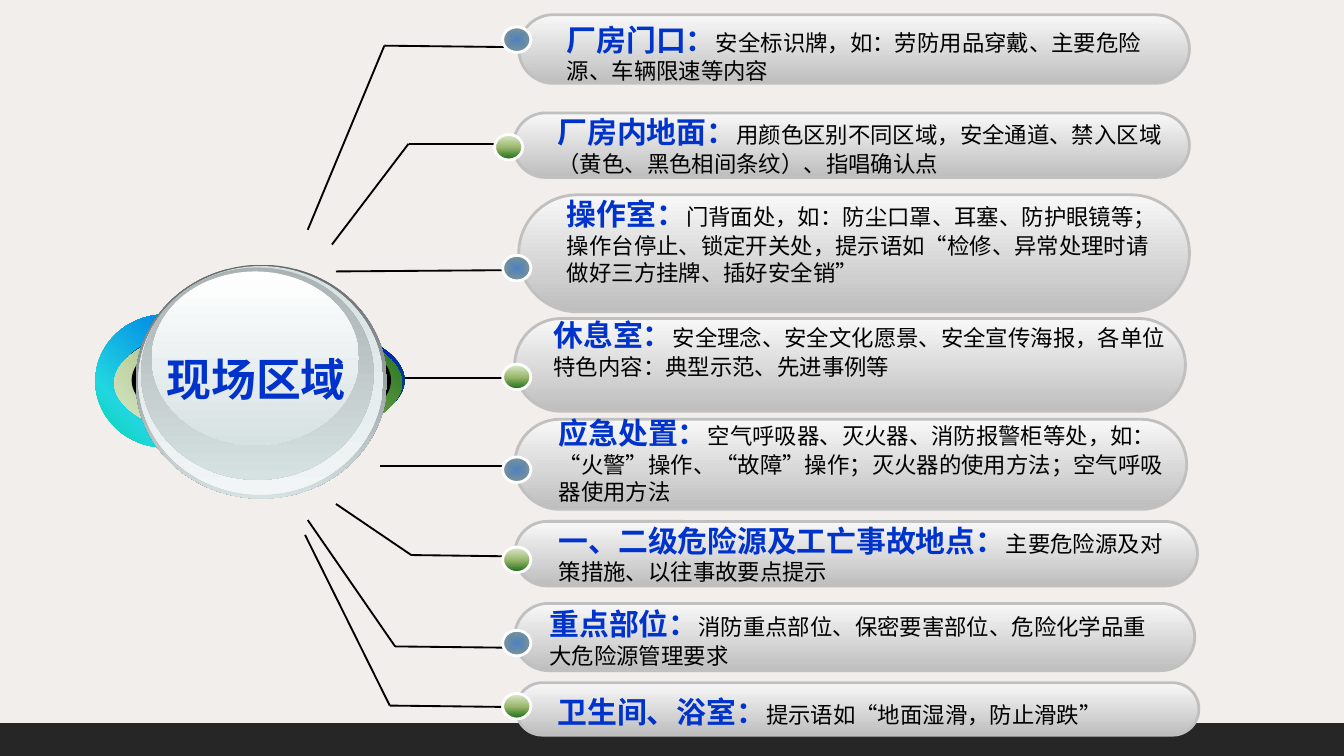
from lxml import etree
from pptx import Presentation
from pptx.dml.color import RGBColor
from pptx.enum.lang import MSO_LANGUAGE_ID
from pptx.enum.shapes import MSO_CONNECTOR, MSO_SHAPE
from pptx.oxml.ns import qn
from pptx.util import Inches, Pt

PX = 9144  # 100 px to the inch
FONT = "Noto Sans CJK SC"
RECT, PILL, OVAL = MSO_SHAPE.RECTANGLE, MSO_SHAPE.ROUNDED_RECTANGLE, MSO_SHAPE.OVAL
STRAIGHT = MSO_CONNECTOR.STRAIGHT
CHINESE = MSO_LANGUAGE_ID.SIMPLIFIED_CHINESE

COLORS = {"page": "F1EEEB", "footer": "262626", "black": "000000", "title": "0033CC",
          "pill_edge": "C0C0C0", "white": "FFFFFF"}

# Gradients: stops of (percent, colour) and angle; None runs from the centre
GREEN_STOPS = [(0, "DDEBCF"), (50, "9CB86E"), (100, "156B13")]
GRADIENTS = {
    "pill": ([(0, "F8F8F8"), (100, "BEBEBE")], 90),
    "blue": ([(0, "4F81BD"), (100, "7D9597")], None),
    "green": (GREEN_STOPS, 90),
    "green_ring": (GREEN_STOPS, 315),
    "cyan_ring": ([(0, "03D4A8"), (25, "21D6E0"), (75, "0087E6"), (100, "005CBF")], 315),
    "navy_ring": ([(0, "005353"), (50, "0000FF"), (100, "005353")], 45),
    "rim": ([(0, "636869"), (100, "D6E1E2")], 90),
    "bevel": ([(0, "D6E1E2"), (100, "F1F5F5")], 90),
    "face": ([(0, "AAB2B3"), (100, "D6E1E2")], 90),
    "gloss": ([(0, "FFFFFF"), (100, "D6E1E2")], 90),
}

# Pill box, label box and bead offset from the pill, bead colour, title, body
TOPICS = [
    ((386, 11, 499, 51), (26, 0, 449, 57), (-12, 9), "blue", "厂房门口：",
     "安全标识牌，如：劳防用品穿戴、主要危险源、车辆限速等内容"),
    ((382, 84, 503, 48), (23, -4, 478, 57), (-14, 16), "green", "厂房内地面：",
     "用颜色区别不同区域，安全通道、禁入区域（黄色、黑色相间条纹）、指唱确认点"),
    ((386, 145, 499, 87), (26, -4, 466, 77), (-12, 45), "blue", "操作室：",
     "门背面处，如：防尘口罩、耳塞、防护眼镜等；操作台停止、锁定开关处，"
     "提示语如“检修、异常处理时请做好三方挂牌、插好安全销”"),
    ((383, 237, 499, 69), (19, -6, 479, 57), (-9, 34), "green", "休息室：",
     "安全理念、安全文化愿景、安全宣传海报，各单位特色内容：典型示范、先进事例等"),
    ((383, 312, 500, 67), (23, -8, 474, 77), (-9, 28), "blue", "应急处置：",
     "空气呼吸器、灭火器、消防报警柜等处，如：“火警”操作、“故障”操作；"
     "灭火器的使用方法；空气呼吸器使用方法"),
    ((383, 388, 508, 48), (23, -4, 478, 57), (-9, 19), "green",
     "一、二级危险源及工亡事故地点：", "主要危险源及对策措施、以往事故要点提示"),
    ((383, 449, 506, 50), (16, -3, 478, 57), (-9, 20), "blue", "重点部位：",
     "消防重点部位、保密要害部位、危险化学品重大危险源管理要求"),
    ((384, 508, 508, 39), (21, 3, 478, 37), (-10, 8), "green", "卫生间、浴室：",
     "提示语如“地面湿滑，防止滑跌”"),
]

# Routes from the hub to each topic
ROUTES = [
    [(229, 171), (286, 34), (376, 35)],
    [(247, 182), (304, 107), (394, 107)],
    [(250, 202), (382, 201)],
    [(279, 281), (385, 281)],
    [(283, 347), (375, 347)],
    [(250, 375), (306, 413), (381, 414)],
    [(229, 387), (294, 481), (380, 482)],
    [(227, 398), (290, 525), (373, 526)],
]

# Hub ellipses, back to front, relative to the hub box
HUB_LAYERS = [
    ((0, 37, 104, 99), "cyan_ring"),
    ((16, 41, 214, 90), "navy_ring"),
    ((14, 43, 214, 90), "green_ring"),
    ((27, 44, 193, 84), "black"),
    ((30, 0, 187, 174), "rim"),
    ((32, 1, 182, 170), "bevel"),
    ((34, 2, 173, 158), "face"),
    ((42, 5, 154, 129), "gloss"),
]


def px(*lengths):
    return [length * PX for length in lengths]


def rgb(name):
    return RGBColor.from_string(COLORS[name])


def set_gradient(shape, name):
    stops, angle = GRADIENTS[name]
    shape.fill.gradient()
    grad = shape._element.spPr.find(qn("a:gradFill"))
    for child in list(grad):
        grad.remove(child)
    stop_list = etree.SubElement(grad, qn("a:gsLst"))
    for percent, color in stops:
        stop = etree.SubElement(stop_list, qn("a:gs"), pos=str(percent * 1000))
        etree.SubElement(stop, qn("a:srgbClr"), val=color)
    if angle is None:
        radial = etree.SubElement(grad, qn("a:path"), {"path": "shape"})
        etree.SubElement(radial, qn("a:fillToRect"), dict.fromkeys("ltrb", "50000"))
    else:
        etree.SubElement(grad, qn("a:lin"), ang=str(angle * 60000), scaled="0")


def add_shape(slide, kind, box, fill, edge=None):
    shape = slide.shapes.add_shape(kind, *px(*box))
    shape.shadow.inherit = False
    if fill in GRADIENTS:
        set_gradient(shape, fill)
    else:
        shape.fill.solid()
        shape.fill.fore_color.rgb = rgb(fill)
    if edge:
        shape.line.color.rgb = rgb(edge)
        shape.line.width = Pt(1.5)
    else:
        shape.line.fill.background()
    return shape


def add_text(slide, box, runs):
    frame = slide.shapes.add_textbox(*px(*box)).text_frame
    frame.word_wrap = True
    for text, size, color, bold in runs:
        run = frame.paragraphs[0].add_run()
        run.text = text
        font = run.font
        font.name, font.size, font.bold = FONT, Pt(size), bold
        font.color.rgb = rgb(color)
        font.language_id = CHINESE
        etree.SubElement(run._r.get_or_add_rPr(), qn("a:ea"), typeface=FONT)


def draw_route(slide, points):
    for start, end in zip(points, points[1:]):
        line = slide.shapes.add_connector(STRAIGHT, *px(*start, *end))
        line.line.color.rgb = rgb("black")
        line.line.width = Pt(1)
        etree.SubElement(line._element.spPr, qn("a:effectLst"))


def draw_topic(slide, box, label, bead, bead_color, title, body):
    left, top = box[:2]
    pill = add_shape(slide, PILL, box, "pill", "pill_edge")
    pill.adjustments[0] = 0.5
    dx, dy, width, height = label
    add_text(slide, (left + dx, top + dy, width, height),
             [(title, 16, "title", True), (body, 12, "black", False)])
    add_shape(slide, OVAL, (left + bead[0], top + bead[1], 21, 19), bead_color, "white")


def draw_hub(slide, left, top):
    for (dx, dy, width, height), fill in HUB_LAYERS:
        add_shape(slide, OVAL, (left + dx, top + dy, width, height), fill)
    add_text(slide, (left + 43, top + 60, 175, 50), [("现场区域", 24, "title", True)])


def main():
    deck = Presentation()
    deck.slide_width = Inches(10)
    deck.slide_height = deck.slide_width * 9 // 16
    slide = deck.slides.add_slide(deck.slide_layouts[6])
    slide.background.fill.solid()
    slide.background.fill.fore_color.rgb = rgb("page")

    # Footer band
    add_shape(slide, RECT, (0, 538, 1000, 25), "footer")
    # Branches, topics and central hub
    for points in ROUTES:
        draw_route(slide, points)
    for topic in TOPICS:
        draw_topic(slide, *topic)
    draw_hub(slide, 71, 197)
    deck.save("out.pptx")


if __name__ == "__main__":
    main()
